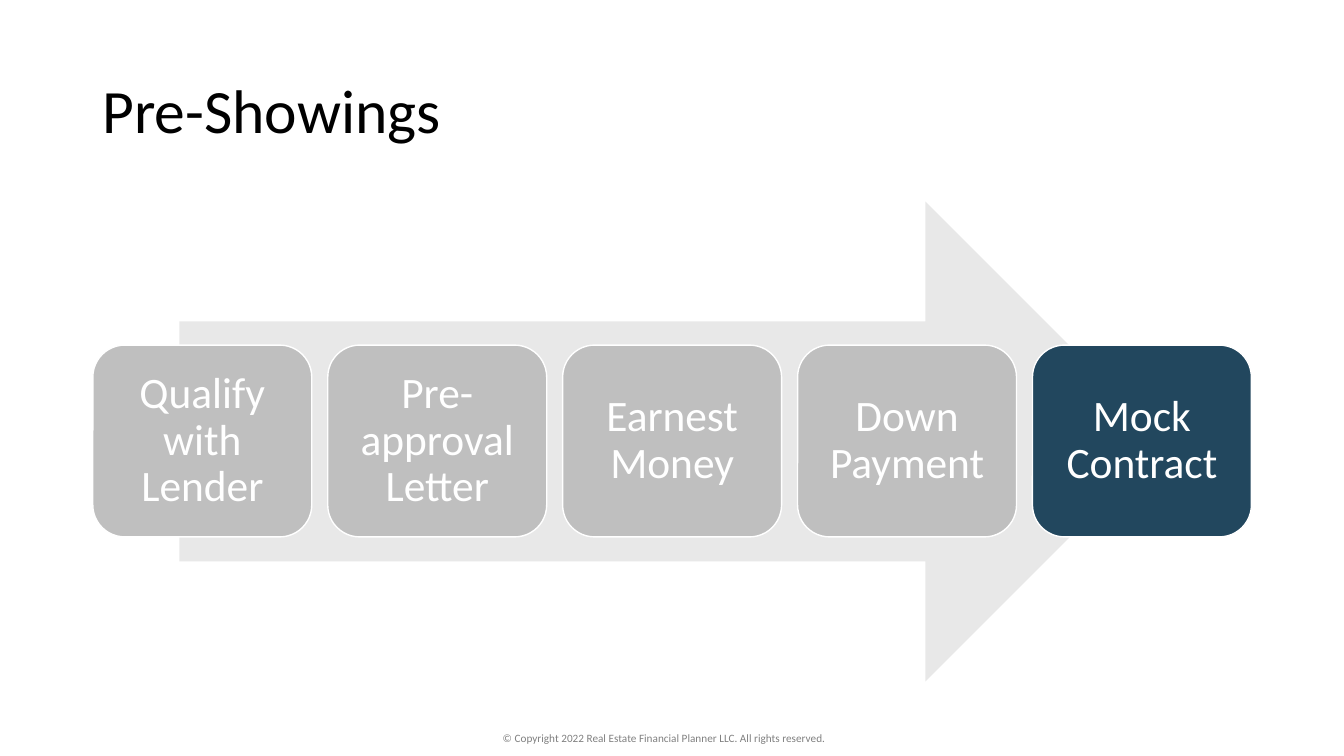
from pptx import Presentation
from pptx.dml.color import RGBColor
from pptx.enum import shapes, text
from pptx.util import Pt

TITLE = "Pre-Showings"
STEPS = [
    "Qualify with Lender",
    "Pre-approval Letter",
    "Earnest Money",
    "Down Payment",
    "Mock Contract",
]
CURRENT_STEP = "Mock Contract"
COPYRIGHT = "© Copyright 2022 Real Estate Financial Planner LLC. All rights reserved."

THEME = {
    "font": "Calibri",
    "title": "000000",
    "footer": "808080",
    "arrow": "E8E8E8",
    "step": "BFBFBF",
    "current": "22475E",
    "light": "FFFFFF",
    "title_size": 44,
    "step_size": 31,
    "footer_size": 8,
}

SLIDE_WIDTH, SLIDE_HEIGHT = 960, 540
ARROW_AREA = (128.2, 144, 704.2, 342.7)
TITLE_AREA = (66, 28.8, 828, 104.4)
FOOTER_AREA = (352, 519, 255.6, 17.3)
STEP_LEFT, STEP_TOP, STEP_WIDTH, STEP_HEIGHT = 66.3, 246.5, 156.4, 137
STEP_GAP = 11.4


def write(holder, words, *, size, color, align=text.PP_ALIGN.LEFT,
          anchor=text.MSO_ANCHOR.MIDDLE, spacing=0.9, inset=(7.2, 3.6)):
    frame = holder.text_frame
    frame.word_wrap = True
    frame.vertical_anchor = anchor
    frame.margin_left = frame.margin_right = Pt(inset[0])
    frame.margin_top = frame.margin_bottom = Pt(inset[1])
    paragraph = frame.paragraphs[0]
    paragraph.alignment = align
    paragraph.line_spacing = spacing
    run = paragraph.add_run()
    run.text = words
    run.font.name = THEME["font"]
    run.font.size = Pt(size)
    run.font.color.rgb = RGBColor.from_string(color)


def draw(slide, kind, area, fill, outline=None):
    block = slide.shapes.add_shape(kind, *map(Pt, area))
    block.shadow.inherit = False
    block.fill.solid()
    block.fill.fore_color.rgb = RGBColor.from_string(fill)
    if outline:
        block.line.color.rgb = RGBColor.from_string(outline)
        block.line.width = Pt(1)
    else:
        block.line.fill.background()
    return block


def main():
    deck = Presentation()
    deck.slide_width, deck.slide_height = Pt(SLIDE_WIDTH), Pt(SLIDE_HEIGHT)
    slide = deck.slides.add_slide(deck.slide_layouts[6])

    footer = slide.shapes.add_textbox(*map(Pt, FOOTER_AREA))
    write(footer, COPYRIGHT, size=THEME["footer_size"], color=THEME["footer"],
          anchor=text.MSO_ANCHOR.TOP, spacing=1.0)
    title = slide.shapes.add_textbox(*map(Pt, TITLE_AREA))
    write(title, TITLE, size=THEME["title_size"], color=THEME["title"])

    draw(slide, shapes.MSO_SHAPE.RIGHT_ARROW, ARROW_AREA, THEME["arrow"])
    for position, step in enumerate(STEPS):
        left = STEP_LEFT + position * (STEP_WIDTH + STEP_GAP)
        fill = THEME["current" if step == CURRENT_STEP else "step"]
        card = draw(slide, shapes.MSO_SHAPE.ROUNDED_RECTANGLE,
                    (left, STEP_TOP, STEP_WIDTH, STEP_HEIGHT), fill, THEME["light"])
        write(card, step, size=THEME["step_size"], color=THEME["light"],
              align=text.PP_ALIGN.CENTER, inset=(9.3, 9.3))

    deck.save("out.pptx")


if __name__ == "__main__":
    main()
